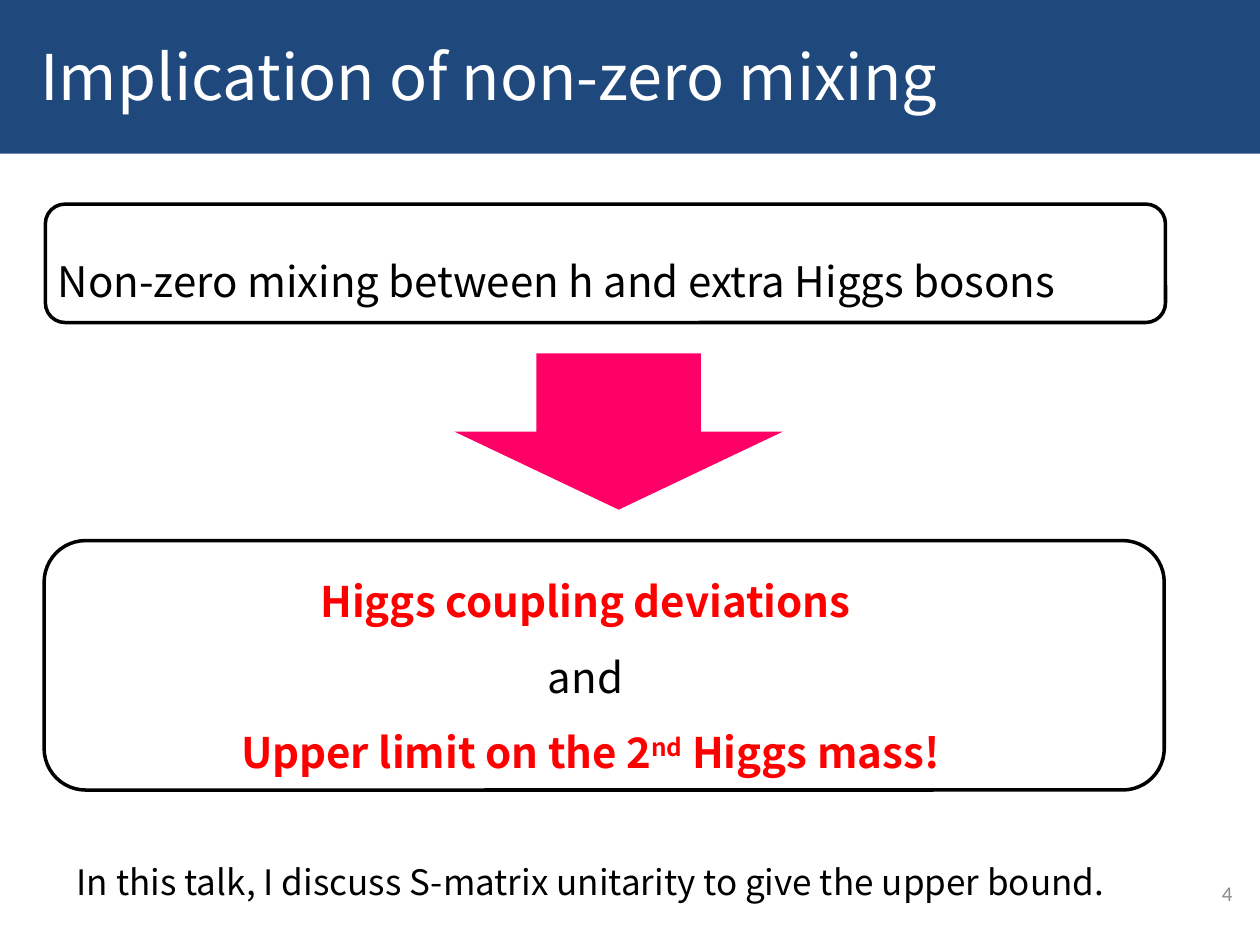
from dataclasses import dataclass

from pptx import Presentation
from pptx.dml.color import RGBColor
from pptx.enum.shapes import MSO_SHAPE
from pptx.enum.text import MSO_ANCHOR, MSO_AUTO_SIZE, PP_ALIGN
from pptx.util import Pt

EMU_PER_PX = 9144  # 100 px to the inch


def px(length):
    return length * EMU_PER_PX


@dataclass(frozen=True)
class Theme:
    font: str = "Noto Sans CJK JP"
    number_font: str = "Calibri"
    navy: str = "1F497D"
    pink: str = "FF0066"
    red: str = "FF0000"
    black: str = "000000"
    white: str = "FFFFFF"
    gray: str = "8C8C8C"
    title_size: int = 36
    body_size: int = 24
    note_size: int = 20
    number_size: int = 12
    outline: int = 2
    line_spacing: float = 1.5


class SlideBuilder:
    def __init__(self, page, theme):
        self.page = page
        self.theme = theme

    def shape(self, kind, frame, fill=None, line=None, parent=None):
        shapes = (parent or self.page).shapes
        box = shapes.add_shape(kind, *map(px, frame))
        box.shadow.inherit = False
        if fill:
            box.fill.solid()
            box.fill.fore_color.rgb = RGBColor.from_string(fill)
        else:
            box.fill.background()
        if line:
            box.line.color.rgb = RGBColor.from_string(line)
            box.line.width = Pt(self.theme.outline)
        else:
            box.line.fill.background()
        return box

    def style(self, para, size, color, bold=False, font=None):
        para.font.name = font or self.theme.font
        para.font.size = Pt(size)
        para.font.bold = bold
        para.font.color.rgb = RGBColor.from_string(color)

    def title(self, text, frame, inset):
        band = self.shape(MSO_SHAPE.RECTANGLE, frame, self.theme.navy)
        text_frame = band.text_frame
        text_frame.margin_left = px(inset)
        text_frame.vertical_anchor = MSO_ANCHOR.MIDDLE
        para = text_frame.paragraphs[0]
        para.text = text
        para.alignment = PP_ALIGN.LEFT
        self.style(para, self.theme.title_size, self.theme.white)

    def page_number(self, text, frame):
        box = self.page.shapes.add_textbox(*map(px, frame))
        box.text_frame.word_wrap = True
        box.text_frame.vertical_anchor = MSO_ANCHOR.MIDDLE
        para = box.text_frame.paragraphs[0]
        para.text = text
        para.alignment = PP_ALIGN.RIGHT
        self.style(para, self.theme.number_size, self.theme.gray,
                   font=self.theme.number_font)

    def statement(self, lines, frame, size, align=PP_ALIGN.LEFT, parent=None):
        """Each line is (spans, color, bold); each span is (text, baseline)."""
        box = self.shape(MSO_SHAPE.RECTANGLE, frame, self.theme.white, parent=parent)
        text_frame = box.text_frame
        text_frame.word_wrap = True
        text_frame.auto_size = MSO_AUTO_SIZE.SHAPE_TO_FIT_TEXT
        text_frame.vertical_anchor = MSO_ANCHOR.TOP
        for index, (spans, color, bold) in enumerate(lines):
            para = text_frame.add_paragraph() if index else text_frame.paragraphs[0]
            para.alignment = align
            para.line_spacing = self.theme.line_spacing
            self.style(para, size, color, bold)
            for text, baseline in spans:
                span = para.add_run()
                span.text = text
                if baseline:
                    span.font._element.set("baseline", str(baseline * 1000))

    def outline(self, frame, parent=None):
        self.shape(MSO_SHAPE.ROUNDED_RECTANGLE, frame, line=self.theme.black,
                   parent=parent)

    def down_arrow(self, frame):
        arrow = self.shape(MSO_SHAPE.RIGHT_ARROW, frame, self.theme.pink)
        arrow.rotation = 90

    def group(self):
        return self.page.shapes.add_group_shape()


def main():
    theme = Theme()
    deck = Presentation()
    deck.slide_width, deck.slide_height = px(1000), px(750)
    page = deck.slides.add_slide(deck.slide_layouts[6])
    builder = SlideBuilder(page, theme)

    # Title band and page number
    builder.title("Implication of non-zero mixing", (0, -3, 1000, 125), inset=32)
    builder.page_number("4", (755, 689, 233, 40))

    # Premise
    premise = "Non-zero mixing between h and extra Higgs bosons"
    builder.statement([([(premise, 0)], theme.black, False)],
                      (36, 178, 909, 79), theme.body_size)
    builder.down_arrow((429, 212, 124, 261))
    builder.outline((36, 162, 889, 94))

    # Consequences
    consequences = [
        ([("Higgs coupling deviations ", 0)], theme.red, True),
        ([("and ", 0)], theme.black, False),
        ([("Upper limit on the 2", 0), ("nd", 30), (" Higgs mass!", 0)],
         theme.red, True),
    ]
    result = builder.group()
    builder.statement(consequences, (51, 432, 835, 192), theme.body_size,
                      PP_ALIGN.CENTER, result)
    builder.outline((35, 429, 889, 198), result)

    # Closing note
    note = "In this talk, I discuss S-matrix unitarity to give the upper bound."
    builder.statement([([(note, 0)], theme.black, False)],
                      (51, 661, 909, 61), theme.note_size)

    deck.save("out.pptx")


if __name__ == "__main__":
    main()
